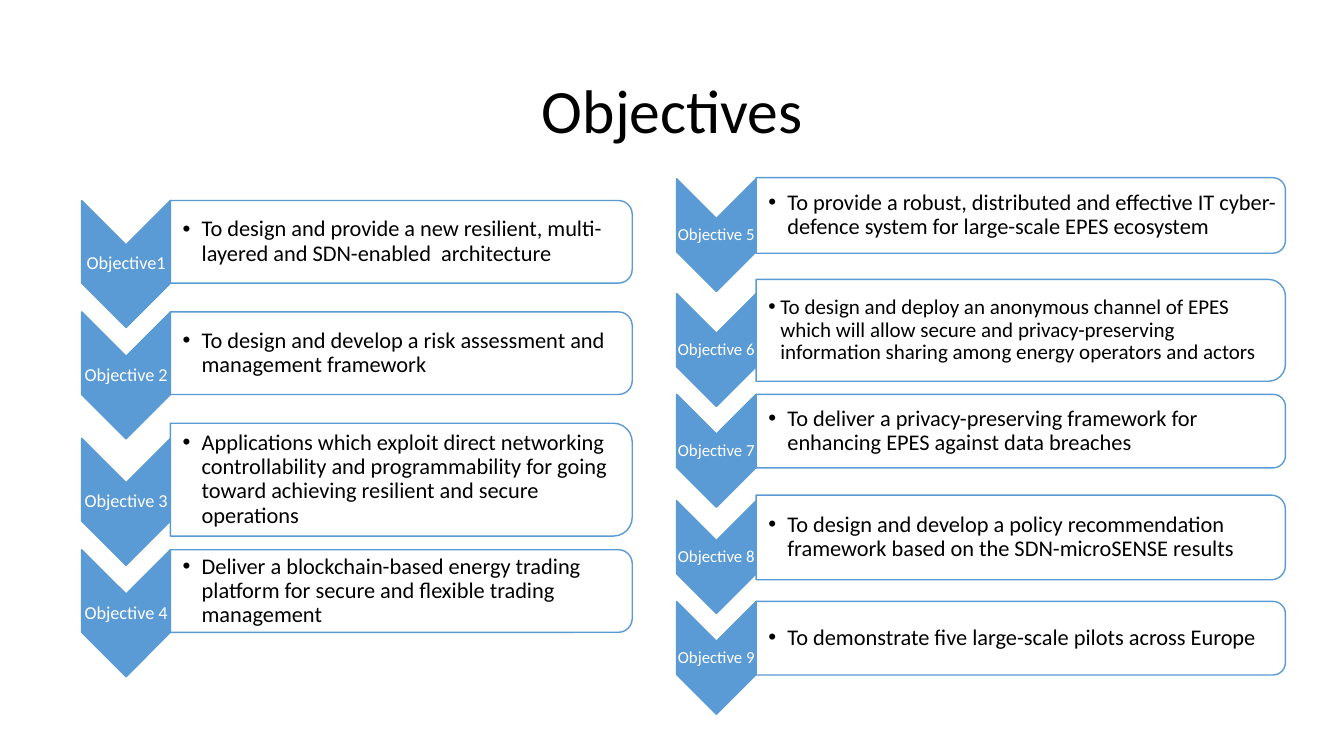
from dataclasses import dataclass

from lxml import etree
from pptx import Presentation
from pptx import util as u
from pptx.dml.color import RGBColor
from pptx.enum import shapes, text
from pptx.oxml.ns import qn

BLUE = RGBColor(0x5B, 0x9B, 0xD5)
WHITE = RGBColor(0xFF, 0xFF, 0xFF)
BLACK = RGBColor(0, 0, 0)
CORNER = 0.05


@dataclass
class Column:
    left: float
    top: float
    chevron_width: float
    chevron_height: float
    panel_width: float
    panel_height: float
    step: float
    label_size: int
    objectives: list


class Deck:
    font = "Calibri"

    def __init__(self):
        self.prs = Presentation()
        self.prs.slide_width = u.Inches(13.33)
        self.prs.slide_height = u.Inches(7.5)
        self.slide = self.prs.slides.add_slide(self.prs.slide_layouts[5])

    def x(self, percent):
        return round(self.prs.slide_width * percent / 100)

    def y(self, percent):
        return round(self.prs.slide_height * percent / 100)

    def box(self, left, top, width, height):
        return self.x(left), self.y(top), self.x(width), self.y(height)

    def set_words(self, frame, words, size, color, align, inset=0.01, indent=0):
        frame.word_wrap = True
        frame.vertical_anchor = text.MSO_ANCHOR.MIDDLE
        frame.margin_left = u.Inches(inset)
        frame.margin_right = frame.margin_top = frame.margin_bottom = u.Inches(0.01)
        frame.text = words
        paragraph = frame.paragraphs[0]
        paragraph.alignment = align
        paragraph.line_spacing = 0.9
        if indent:
            properties = paragraph._p.get_or_add_pPr()
            properties.set("marL", str(u.Inches(indent)))
            properties.set("indent", str(-u.Inches(indent)))
            etree.SubElement(properties, qn("a:buFont")).set("typeface", "Arial")
            etree.SubElement(properties, qn("a:buChar")).set("char", "•")
        paragraph.font.name = self.font
        paragraph.font.size = u.Pt(size)
        paragraph.font.color.rgb = color

    def title(self, words, area):
        title = self.slide.shapes.title
        title.left, title.top, title.width, title.height = self.box(*area)
        self.set_words(title.text_frame, words, 44, BLACK, text.PP_ALIGN.CENTER)

    def turned(self, kind, area, fill):
        left, top, width, height = self.box(*area)
        shift = (width - height) // 2
        shape = self.slide.shapes.add_shape(kind, left + shift, top - shift, height, width)
        shape.rotation = 90
        shape.shadow.inherit = False
        shape.fill.solid()
        shape.fill.fore_color.rgb = fill
        shape.line.color.rgb = BLUE
        shape.line.width = u.Pt(1)
        return shape

    def label(self, area, *style, **spacing):
        frame = self.slide.shapes.add_textbox(*self.box(*area)).text_frame
        self.set_words(frame, *style, **spacing)

    def chevron(self, area, name, size):
        self.turned(shapes.MSO_SHAPE.CHEVRON, area, BLUE)
        left, top, width, height = area
        point = width * self.prs.slide_width / self.prs.slide_height / 2
        self.label((left, top + point, width, height - 2 * point),
                   name, size, WHITE, text.PP_ALIGN.CENTER)

    def panel(self, area, goal, size, indent):
        panel = self.turned(shapes.MSO_SHAPE.ROUND_2_SAME_RECTANGLE, area, WHITE)
        white = panel._element.spPr.find(qn("a:solidFill"))[0]
        etree.SubElement(white, qn("a:alpha")).set("val", "90000")
        left, top, width, height = area
        margin = height * CORNER
        self.label((left, top + margin, width - margin / 2, height - 2 * margin),
                   goal, size, BLACK, text.PP_ALIGN.LEFT, inset=0.12, indent=indent)

    def column(self, col):
        top = col.top
        for name, goal, height, size, indent in col.objectives:
            chevron_top = top + (height - col.panel_height) / 2
            self.chevron((col.left, chevron_top, col.chevron_width, col.chevron_height),
                         name, col.label_size)
            self.panel((col.left + col.chevron_width, top, col.panel_width, height),
                       goal, size, indent)
            top = chevron_top + col.step


FIRST_OBJECTIVES = [
    ("Objective1", "To design and provide a new resilient, multi-layered and "
     "SDN-enabled  architecture", 10.93, 16, 0.19),
    ("Objective 2", "To design and develop a risk assessment and management framework",
     10.93, 16, 0.19),
    ("Objective 3", "Applications which exploit direct networking controllability and "
     "programmability for going toward achieving resilient and secure operations",
     14.93, 16, 0.19),
    ("Objective 4", "Deliver a blockchain-based energy trading platform for secure and "
     "flexible trading management", 10.93, 16, 0.19),
]
LAST_OBJECTIVES = [
    ("Objective 5", "To provide a robust, distributed and effective IT cyber-defence "
     "system for large-scale EPES ecosystem", 10, 16, 0.19),
    ("Objective 6", "To design and deploy an anonymous channel of EPES which will allow "
     "secure and privacy-preserving information sharing among energy operators and actors",
     13.47, 15, 0.12),
    ("Objective 7", "To deliver a privacy-preserving framework for enhancing EPES against "
     "data breaches", 9.73, 16, 0.19),
    ("Objective 8", "To design and develop a policy recommendation framework based on the "
     "SDN-microSENSE results", 11.2, 16, 0.19),
    ("Objective 9", "To demonstrate five large-scale pilots across Europe", 9.73, 16, 0.19),
]


def main():
    deck = Deck()
    deck.title("Objectives", (6.9, 5.33, 86.27, 19.33))
    deck.column(Column(50.34, 23.5, 5.92, 14.93, 39.38, 9.73, 13.33, 12, LAST_OBJECTIVES))
    deck.column(Column(6.08, 26.53, 6.6, 16.8, 34.36, 10.93, 14.73, 13, FIRST_OBJECTIVES))
    deck.prs.save("out.pptx")


if __name__ == "__main__":
    main()
